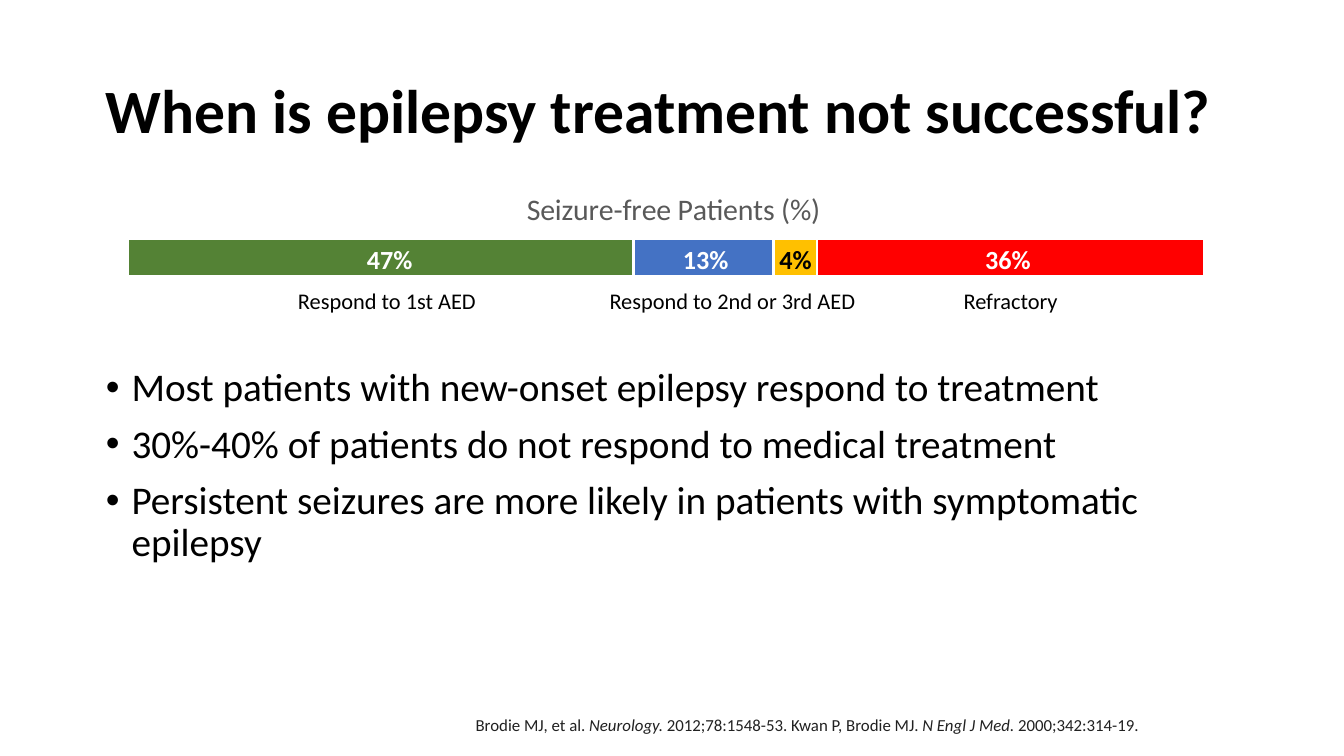
import pptx
import pptx.chart.data
import pptx.dml.color
import pptx.enum.chart
import pptx.enum.text
import pptx.oxml
import pptx.oxml.ns
import pptx.util
from pptx.util import Inches, Pt

FONT = "Calibri"
COLORS = {"black": "000000", "white": "FFFFFF", "citation": "212121", "heading": "595959",
          "green": "548235", "blue": "4472C4", "amber": "FFC000", "red": "FF0000"}

# Content
TITLE = "When is epilepsy treatment not successful?"
CHART_TITLE = "Seizure-free Patients (%)"
# value, bar colour, label colour, label centre
SEGMENTS = [(47, "green", "white", 2.9), (13, "blue", "white", 5.25),
            (4, "amber", "black", 5.92), (36, "red", "white", 7.5)]
# text, centre, width
CAPTIONS = [("Respond to 1st AED", 2.88, 1.54),
            ("Respond to 2nd or 3rd AED", 5.45, 2.05),
            ("Refractory", 7.52, 0.91)]
BULLETS = ["Most patients with new-onset epilepsy respond to treatment",
           "30%-40% of patients do not respond to medical treatment",
           "Persistent seizures are more likely in patients with symptomatic epilepsy"]
# text, italic
CITATION = [("Brodie MJ, et al. ", False), ("Neurology.", True),
            (" 2012;78:1548-53. Kwan P, Brodie MJ. ", False),
            ("N Engl J Med. ", True), ("2000;342:314-19.", False)]

SLIDE_WIDTH = 10
LEFT, WIDTH = 0.69, 8.62
ANCHOR = pptx.enum.text.MSO_ANCHOR
CENTER = pptx.enum.text.PP_ALIGN.CENTER


def rgb(name):
    return pptx.dml.color.RGBColor.from_string(COLORS[name])


def style(font, size, color, bold=False, italic=False):
    font.name, font.size, font.bold, font.italic = FONT, Pt(size), bold, italic
    font.color.rgb = rgb(color)


def add_box(s, left, top, width, height, anchor=ANCHOR.TOP, wrap=True):
    tf = s.shapes.add_textbox(Inches(left), Inches(top), Inches(width), Inches(height)).text_frame
    tf.word_wrap, tf.vertical_anchor = wrap, anchor
    return tf


def add_run(p, text, size, color, bold=False, italic=False):
    r = p.add_run()
    r.text = text
    style(r.font, size, color, bold, italic)


def add_label(s, text, center, top, width, height, size, color, bold=False):
    tf = add_box(s, center - width / 2, top, width, height, wrap=False)
    p = tf.paragraphs[0]
    p.alignment = CENTER
    add_run(p, text, size, color, bold)


def layout_xml(**parts):
    items = "".join(f'<c:{key} val="{val}"/>' for key, val in parts.items())
    return pptx.oxml.parse_xml(
        f'<c:layout {pptx.oxml.ns.nsdecls("c")}><c:manualLayout>{items}</c:manualLayout></c:layout>')


def set_layout(element, before, **parts):
    """Place a chart part at fractions of the chart area."""
    for old in element.findall(pptx.oxml.ns.qn("c:layout")):
        element.remove(old)
    element.find(pptx.oxml.ns.qn(before)).addprevious(layout_xml(**parts))


def add_response_chart(s):
    data = pptx.chart.data.CategoryChartData()
    data.categories = ["1"]
    for i, (value, *_) in enumerate(SEGMENTS, 1):
        data.add_series(f"Series {i}", [value])
    chart = s.shapes.add_chart(pptx.enum.chart.XL_CHART_TYPE.BAR_STACKED_100, Inches(LEFT),
                               Inches(1.31), Inches(WIDTH), Inches(1.14), data).chart
    style(chart.font, 10, "black")
    chart.has_legend = False
    for axis in (chart.category_axis, chart.value_axis):
        axis.visible = False
        axis.has_major_gridlines = False
    chart.value_axis.tick_labels.number_format = "0%"
    chart.value_axis.tick_labels.number_format_is_linked = False

    plot = chart.plots[0]
    plot.gap_width, plot.overlap, plot.vary_by_categories = 150, 100, False
    for series, (_, color, *_) in zip(plot.series, SEGMENTS):
        series.format.fill.solid()
        series.format.fill.fore_color.rgb = rgb(color)
        series.format.line.color.rgb = rgb("white")
        series.format.line.width = Pt(1.5)

    chart.has_title = True
    title = chart.chart_title
    add_run(title.text_frame.paragraphs[0], CHART_TITLE, 16, "heading")
    title.include_in_layout = False
    set_layout(title._element, "c:overlay", xMode="edge", yMode="edge", x=0.37, y=0.05)
    set_layout(plot._element.getparent(), "c:barChart", layoutTarget="inner",
               xMode="edge", yMode="edge", x=0.03, y=0.22, w=0.93, h=0.62)


def add_bullets(s):
    tf = add_box(s, LEFT, 2.69, WIDTH, 1.93)
    for i, text in enumerate(BULLETS):
        p = tf.add_paragraph() if i else tf.paragraphs[0]
        p.line_spacing = 0.9
        p.space_before = Pt(7.5 if i else 0)
        pPr = p._p.get_or_add_pPr()
        pPr.set("marL", str(Inches(0.19)))
        pPr.set("indent", str(-Inches(0.19)))
        for bullet in ('buFont {} typeface="Arial"', 'buChar {} char="•"'):
            pPr.append(pptx.oxml.parse_xml(f'<a:{bullet.format(pptx.oxml.ns.nsdecls("a"))}/>'))
        add_run(p, text, 21, "black")


def main():
    prs = pptx.Presentation()
    prs.slide_width = Inches(SLIDE_WIDTH)
    prs.slide_height = Inches(SLIDE_WIDTH * 9 / 16)
    s = prs.slides.add_slide(prs.slide_layouts[6])

    # Title
    p = add_box(s, LEFT, 0.3, WIDTH, 1.09, ANCHOR.MIDDLE).paragraphs[0]
    p.line_spacing = 0.9
    add_run(p, TITLE, 33, "black", bold=True)

    add_bullets(s)

    # Citation
    p = add_box(s, 3.44, 4.96, 5.88, 0.56, ANCHOR.BOTTOM).paragraphs[0]
    for text, italic in CITATION:
        add_run(p, text, 9, "citation", italic=italic)

    # Chart with its captions and percentages
    add_response_chart(s)
    for text, center, width in CAPTIONS:
        add_label(s, text, center, 2.09, width, 0.3, 12, "black")
    for value, _, color, center in SEGMENTS:
        add_label(s, f"{value}%", center, 1.76, 0.55, 0.34, 14, color, bold=True)

    prs.save("out.pptx")


if __name__ == "__main__":
    main()
